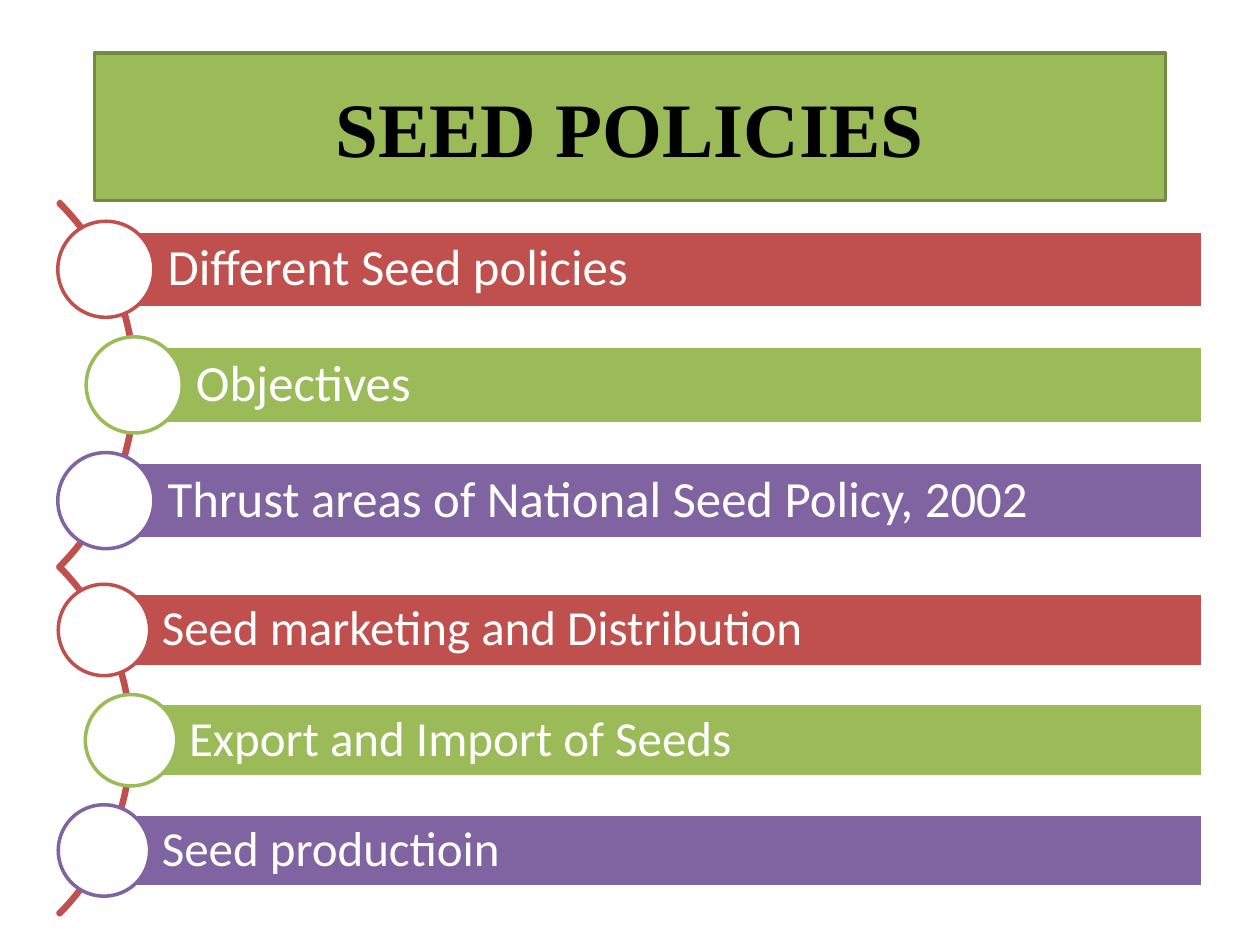
from dataclasses import dataclass

from pptx import Presentation
from pptx import util as u
from pptx.dml.color import RGBColor
from pptx.enum import shapes, text

# The slide is a grid of 100 columns by 75 rows of square cells
COLUMNS, ROWS = 100, 75
CELL = u.Inches(10) // COLUMNS
BARS_RIGHT = 95.45

COLORS = {
    "red": "C0504D",
    "green": "9BBB59",
    "purple": "8064A2",
    "dark_green": "738A42",
    "white": "FFFFFF",
    "black": "000000",
}
TOPIC_COLORS = ("red", "green", "purple")


@dataclass
class TopicList:
    topics: tuple[str, ...]
    middle: float      # row of the middle bar's centre
    pitch: float       # rows from one bar to the next
    bar_height: float
    left: float        # column where the outer bars start
    bulge: float       # further columns for the middle bar
    arc_left: float
    arc_size: float
    inset: float
    font_size: float


TOPIC_LISTS = (
    TopicList(
        ("Different Seed policies", "Objectives",
         "Thrust areas of National Seed Policy, 2002"),
        middle=30.55, pitch=9.18, bar_height=6.1, left=8.4, bulge=2.25,
        arc_left=-30.4, arc_size=41.2, inset=4.9, font_size=29),
    TopicList(
        ("Seed marketing and Distribution", "Export and Import of Seeds",
         "Seed productioin"),
        middle=58.75, pitch=8.75, bar_height=5.8, left=8.25, bulge=2.15,
        arc_left=-28.8, arc_size=39.3, inset=4.6, font_size=28),
)


def grid(cells: float) -> int:
    return round(cells * CELL)


def rgb(name: str) -> RGBColor:
    return RGBColor.from_string(COLORS[name])


def add_outlined(slide, preset, left: float, top: float, width: float,
                 height: float, fill: str, line: str):
    shape = slide.shapes.add_shape(
        preset, grid(left), grid(top), grid(width), grid(height))
    shape.shadow.inherit = False
    shape.fill.solid()
    shape.fill.fore_color.rgb = rgb(fill)
    shape.line.color.rgb = rgb(line)
    shape.line.width = u.Pt(2)
    return shape


def write(shape, words: str, font_name: str, size: float, color: str,
          align, bold: bool = False) -> None:
    frame = shape.text_frame
    frame.word_wrap = True
    frame.vertical_anchor = text.MSO_ANCHOR.MIDDLE
    paragraph = frame.paragraphs[0]
    paragraph.text = words
    paragraph.alignment = align
    font = paragraph.font
    font.name, font.size, font.bold = font_name, u.Pt(size), bold
    font.color.rgb = rgb(color)


def draw_topics(slide, group: TopicList) -> None:
    # Curve behind the dots, from 315 to 45 degrees
    arc = add_outlined(
        slide, shapes.MSO_SHAPE.BLOCK_ARC, group.arc_left,
        group.middle - group.arc_size / 2, group.arc_size, group.arc_size,
        "red", "red")
    for index, value in enumerate((189, 27, 0.006)):
        arc.adjustments[index] = value

    # A bar and its dot for each topic
    dot_size = group.bar_height * 1.25
    for index, (topic, color) in enumerate(zip(group.topics, TOPIC_COLORS)):
        offset = index - 1
        center = group.middle + offset * group.pitch
        left = group.left + (group.bulge if offset == 0 else 0)
        bar = add_outlined(
            slide, shapes.MSO_SHAPE.RECTANGLE, left,
            center - group.bar_height / 2, BARS_RIGHT - left,
            group.bar_height, color, "white")
        frame = bar.text_frame
        frame.margin_left = grid(group.inset)
        frame.margin_right = frame.margin_top = frame.margin_bottom = grid(0.8)
        write(bar, topic, "Calibri", group.font_size, "white",
              text.PP_ALIGN.LEFT)
        frame.paragraphs[0].line_spacing = 0.9
        add_outlined(
            slide, shapes.MSO_SHAPE.OVAL, left - dot_size / 2,
            center - dot_size / 2, dot_size, dot_size, "white", color)


def main() -> None:
    deck = Presentation()
    deck.slide_width, deck.slide_height = grid(COLUMNS), grid(ROWS)
    slide = deck.slides.add_slide(deck.slide_layouts[6])

    # Title
    title = add_outlined(slide, shapes.MSO_SHAPE.RECTANGLE,
                         7.5, 4.2, 85, 11.7, "green", "dark_green")
    write(title, "SEED POLICIES", "Times New Roman", 44, "black",
          text.PP_ALIGN.CENTER, bold=True)

    # Two lists of topics
    for group in TOPIC_LISTS:
        draw_topics(slide, group)

    deck.save("out.pptx")


if __name__ == "__main__":
    main()
